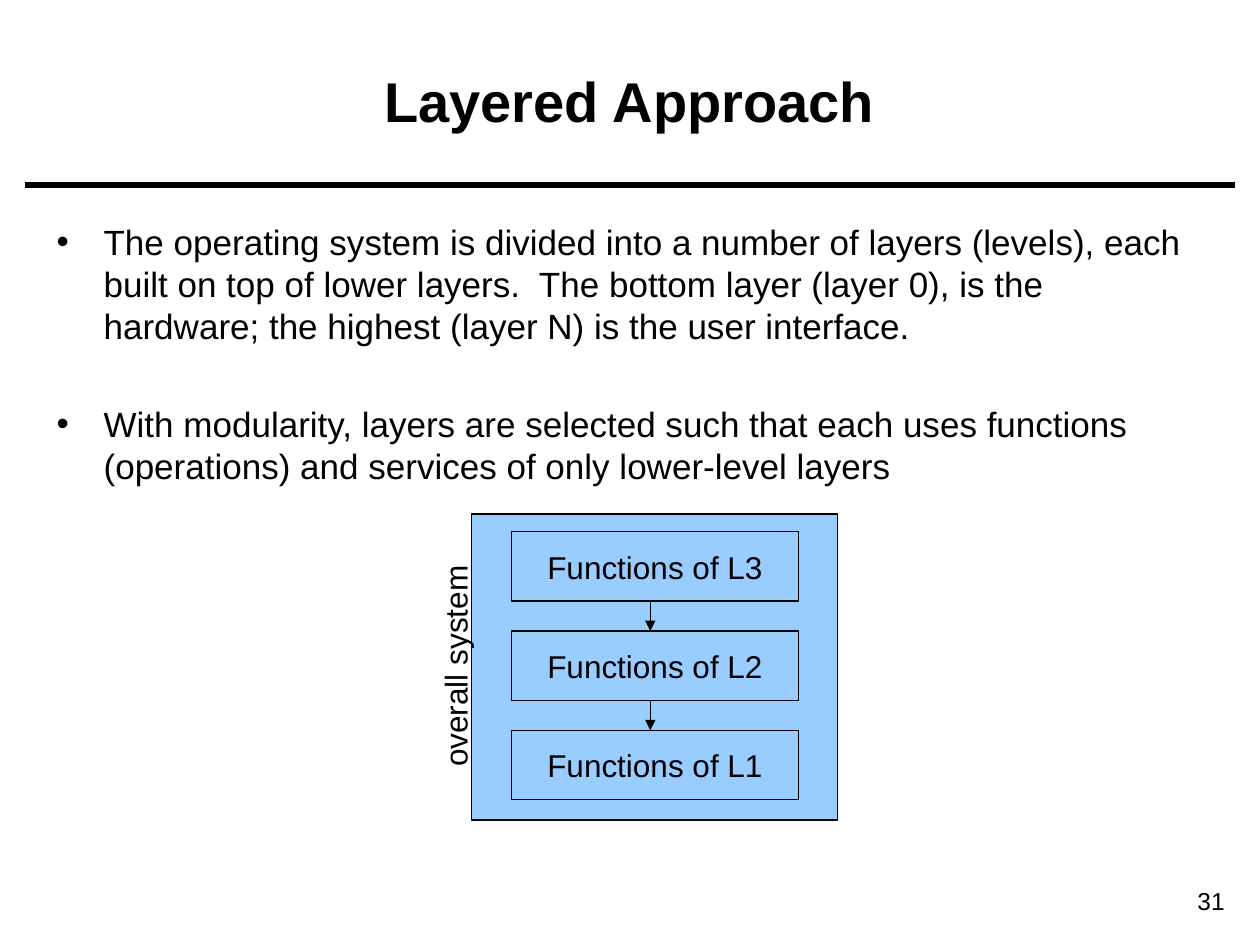
from lxml.etree import SubElement
from pptx import Presentation
from pptx.dml.color import RGBColor
from pptx.enum.shapes import MSO_CONNECTOR as Connector, MSO_SHAPE as Shape
from pptx.enum.text import MSO_ANCHOR as Anchor, PP_ALIGN as Align
from pptx.oxml.ns import qn
from pptx.util import Cm, Pt


def color(value):
    return RGBColor.from_string(value)


class SlideBuilder:
    font_name = "Arial"
    ink = "000000"
    panel = "99CCFF"

    def __init__(self, slide):
        self.slide = slide

    def format(self, paragraph, size, align=Align.LEFT, bold=False):
        paragraph.alignment = align
        font = paragraph.font
        font.name, font.size, font.bold = self.font_name, Pt(size), bold
        font.color.rgb = color(self.ink)

    def title(self, text, left, top, width, height):
        title = self.slide.shapes.title
        title.left, title.top = Cm(left), Cm(top)
        title.width, title.height = Cm(width), Cm(height)
        frame = title.text_frame
        frame.text = text
        frame.vertical_anchor = Anchor.MIDDLE
        self.format(frame.paragraphs[0], 32, Align.CENTER, bold=True)

    def text(self, text, left, top, width, height, size, align=Align.LEFT):
        box = self.slide.shapes.add_textbox(Cm(left), Cm(top), Cm(width), Cm(height))
        box.text_frame.word_wrap = True
        box.text_frame.text = text
        for paragraph in box.text_frame.paragraphs:
            self.format(paragraph, size, align)
        return box

    def bullets(self, items, left, top, width, height, gap):
        box = self.text("\n".join(items), left, top, width, height, 20)
        for index, paragraph in enumerate(box.text_frame.paragraphs):
            paragraph.space_before = Pt(gap if index else 2)
            properties = paragraph._p.get_or_add_pPr()
            properties.set("marL", str(Cm(0.95)))
            properties.set("indent", str(Cm(-0.95)))
            SubElement(properties, qn("a:buFont"), typeface=self.font_name)
            SubElement(properties, qn("a:buChar"), char="•")

    def box(self, left, top, width, height, text=""):
        shape = self.slide.shapes.add_shape(
            Shape.RECTANGLE, Cm(left), Cm(top), Cm(width), Cm(height))
        shape.shadow.inherit = False
        shape.fill.solid()
        shape.fill.fore_color.rgb = color(self.panel)
        shape.line.color.rgb = color(self.ink)
        shape.line.width = Pt(0.75)
        if text:
            frame = shape.text_frame
            frame.word_wrap = False
            frame.vertical_anchor = Anchor.MIDDLE
            frame.text = text
            self.format(frame.paragraphs[0], 18, Align.CENTER)

    def line(self, x1, y1, x2, y2, weight, arrow=False):
        connector = self.slide.shapes.add_connector(
            Connector.STRAIGHT, Cm(x1), Cm(y1), Cm(x2), Cm(y2))
        connector.line.color.rgb = color(self.ink)
        connector.line.width = Pt(weight)
        if arrow:
            SubElement(connector.line._get_or_add_ln(), qn("a:tailEnd"), type="triangle")
        SubElement(connector._element.spPr, qn("a:effectLst"))


def main():
    presentation = Presentation()
    presentation.slide_width, presentation.slide_height = Cm(25.4), Cm(19.05)
    title_only = presentation.slide_layouts[5]
    builder = SlideBuilder(presentation.slides.add_slide(title_only))

    builder.title("Layered Approach", 0.89, 0.43, 23.6, 3.18)
    builder.line(0.5, 3.73, 24.9, 3.73, 3)
    builder.bullets([
        "The operating system is divided into a number of layers (levels), each "
        "built on top of lower layers.  The bottom layer (layer 0), is the "
        "hardware; the highest (layer N) is the user interface.",
        "With modularity, layers are selected such that each uses functions "
        "(operations) and services of only lower-level layers",
    ], 0.89, 4.32, 23.6, 13, gap=32)

    builder.box(9.5, 10.36, 7.39, 6.17)
    layer_top, layer_height, step = 10.72, 1.4, 2.0
    layers = ["Functions of L3", "Functions of L2", "Functions of L1"]
    for index, layer in enumerate(layers):
        top = layer_top + index * step
        builder.box(10.31, top, 5.79, layer_height, layer)
        if index:
            builder.line(13.11, top - step + layer_height, 13.11, top, 0.75, arrow=True)

    label = builder.text("overall system", 6.68, 12.7, 5, 1.02, 18)
    label.rotation = 270
    builder.text("31", 22.3, 17.73, 2.64, 0.86, 14, Align.RIGHT)

    presentation.save("out.pptx")


if __name__ == "__main__":
    main()
